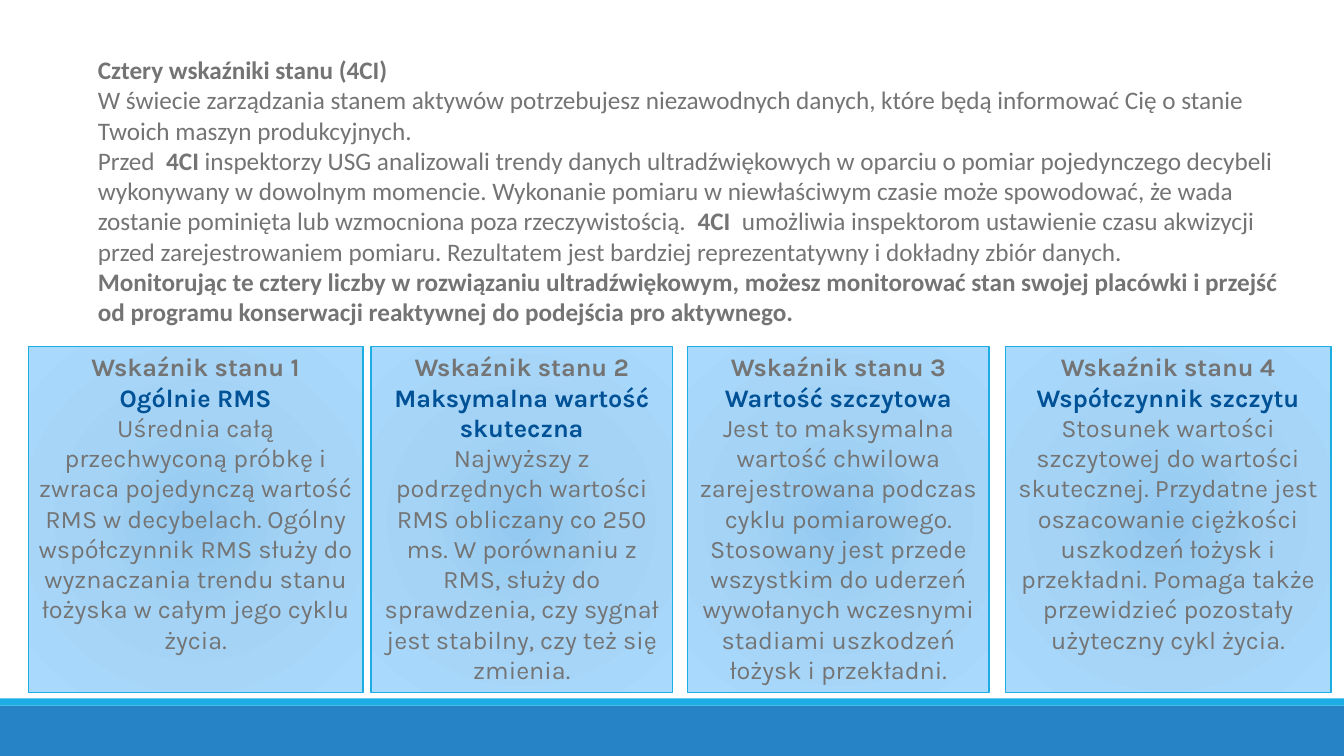
from dataclasses import dataclass

from lxml import etree
from pptx import Presentation
from pptx.dml.color import RGBColor
from pptx.enum import shapes, text
from pptx.oxml import ns
from pptx.util import Inches, Pt


@dataclass(frozen=True)
class Theme:
    body_font: str = "Calibri"
    card_font: str = "Karla"
    size: int = 18
    grey: str = "747474"
    navy: str = "005195"
    band: str = "2683C6"
    accent: str = "1CADE4"
    glow: tuple = ((0, "92C9F0"), (45, "A4D3F5"), (100, "A9D9FD"))


THEME = Theme()

HEADING = "Cztery wskaźniki stanu (4CI)"

# Each paragraph is a list of (words, bold) spans
INTRO = [
    [("W świecie zarządzania stanem aktywów potrzebujesz niezawodnych danych, które będą "
      "informować Cię o stanie Twoich maszyn produkcyjnych.", False)],
    [("Przed  ", False), ("4CI", True),
     (" inspektorzy USG analizowali trendy danych ultradźwiękowych w oparciu o pomiar "
      "pojedynczego decybeli wykonywany w dowolnym momencie. Wykonanie pomiaru w "
      "niewłaściwym czasie może spowodować, że wada", False)],
    [("zostanie pominięta lub wzmocniona poza rzeczywistością.  ", False), ("4CI", True),
     ("  umożliwia inspektorom ustawienie czasu akwizycji przed zarejestrowaniem pomiaru. "
      "Rezultatem jest bardziej reprezentatywny i dokładny zbiór danych.", False)],
    [("Monitorując te cztery liczby w rozwiązaniu ultradźwiękowym, możesz monitorować stan "
      "swojej placówki i przejść od programu konserwacji reaktywnej do podejścia pro "
      "aktywnego.", True)],
]

# Left, width, indicator name, description
CARDS = [
    (0.28, 3.32, "Ogólnie RMS",
     "Uśrednia całą przechwyconą próbkę i zwraca pojedynczą wartość RMS w decybelach. "
     "Ogólny współczynnik RMS służy do wyznaczania trendu stanu łożyska w całym jego "
     "cyklu życia."),
    (3.68, 2.99, "Maksymalna wartość skuteczna",
     "Najwyższy z podrzędnych wartości RMS obliczany co 250 ms. W porównaniu z RMS, służy "
     "do sprawdzenia, czy sygnał jest stabilny, czy też się zmienia."),
    (6.82, 2.99, "Wartość szczytowa",
     "Jest to maksymalna wartość chwilowa zarejestrowana podczas cyklu pomiarowego. "
     "Stosowany jest przede wszystkim do uderzeń wywołanych wczesnymi stadiami uszkodzeń "
     "łożysk i przekładni."),
    (9.97, 3.23, "Współczynnik szczytu",
     "Stosunek wartości szczytowej do wartości skutecznej. Przydatne jest oszacowanie "
     "ciężkości uszkodzeń łożysk i przekładni. Pomaga także przewidzieć pozostały "
     "użyteczny cykl życia."),
]


def place(shape, left, top, width, height):
    shape.left, shape.top = Inches(left), Inches(top)
    shape.width, shape.height = Inches(width), Inches(height)


def style(font, name, color, bold=None):
    font.name, font.size, font.bold = name, Pt(THEME.size), bold
    font.color.rgb = RGBColor.from_string(color)


def prepare_frame(shape):
    frame = shape.text_frame
    frame.word_wrap = True
    frame.auto_size = text.MSO_AUTO_SIZE.NONE
    frame.vertical_anchor = text.MSO_ANCHOR.TOP
    return frame


def next_para(frame, index):
    return frame.add_paragraph() if index else frame.paragraphs[0]


def add_rectangle(page, left, top, width, height):
    shape = page.shapes.add_shape(
        shapes.MSO_SHAPE.RECTANGLE,
        Inches(left), Inches(top), Inches(width), Inches(height))
    shape.shadow.inherit = False
    return shape


def add_band(page, top, height, color):
    band = add_rectangle(page, 0, top, 13.33, height)
    band.fill.solid()
    band.fill.fore_color.rgb = RGBColor.from_string(color)
    band.line.fill.background()


def fill_radial(shape, stops):
    gradient = etree.Element(ns.qn("a:gradFill"), rotWithShape="1")
    stop_list = etree.SubElement(gradient, ns.qn("a:gsLst"))
    for percent, color in stops:
        stop = etree.SubElement(stop_list, ns.qn("a:gs"), pos=str(percent * 1000))
        etree.SubElement(stop, ns.qn("a:srgbClr"), val=color)
    circle = etree.SubElement(gradient, ns.qn("a:path"), path="circle")
    etree.SubElement(circle, ns.qn("a:fillToRect"),
                     {side: "100000" for side in "ltrb"})
    shape._element.spPr.find(ns.qn("a:prstGeom")).addnext(gradient)


def fill_heading(title):
    place(title, 0.87, 0.49, 12.07, 0.4)
    frame = prepare_frame(title)
    frame.text = HEADING
    para = frame.paragraphs[0]
    para.alignment = text.PP_ALIGN.LEFT
    style(para.font, THEME.body_font, THEME.grey, True)


def fill_intro(body):
    place(body, 0.87, 0.79, 12.07, 2.53)
    frame = prepare_frame(body)
    for index, spans in enumerate(INTRO):
        para = next_para(frame, index)
        properties = para._p.get_or_add_pPr()
        properties.set("marL", "0")
        properties.set("indent", "0")
        etree.SubElement(properties, ns.qn("a:buNone"))
        para.space_before = Pt(0)
        style(para.font, THEME.body_font, THEME.grey)
        for words, bold in spans:
            span = para.add_run()
            span.text = words
            span.font.bold = bold


def add_card(page, number, left, width, name, description):
    card = add_rectangle(page, left, 3.44, width, 3.43)
    fill_radial(card, THEME.glow)
    card.line.color.rgb = RGBColor.from_string(THEME.accent)
    card.line.width = Pt(1)
    frame = prepare_frame(card)
    lines = [(f"Wskaźnik stanu {number}", THEME.grey, True),
             (name, THEME.navy, True),
             (description, THEME.grey, False)]
    for index, (words, color, bold) in enumerate(lines):
        para = next_para(frame, index)
        para.text = words
        para.alignment = text.PP_ALIGN.CENTER
        style(para.font, THEME.card_font, color, bold)


def main():
    deck = Presentation()
    deck.slide_width, deck.slide_height = Inches(13.33), Inches(7.5)
    page = deck.slides.add_slide(deck.slide_layouts[1])

    # Bands along the bottom edge
    add_band(page, 7, 0.5, THEME.band)
    add_band(page, 6.93, 0.07, THEME.accent)

    # Heading and introduction
    fill_heading(page.shapes.title)
    fill_intro(page.placeholders[1])

    # Four condition indicators
    for number, card in enumerate(CARDS, start=1):
        add_card(page, number, *card)

    deck.save("out.pptx")


if __name__ == "__main__":
    main()
